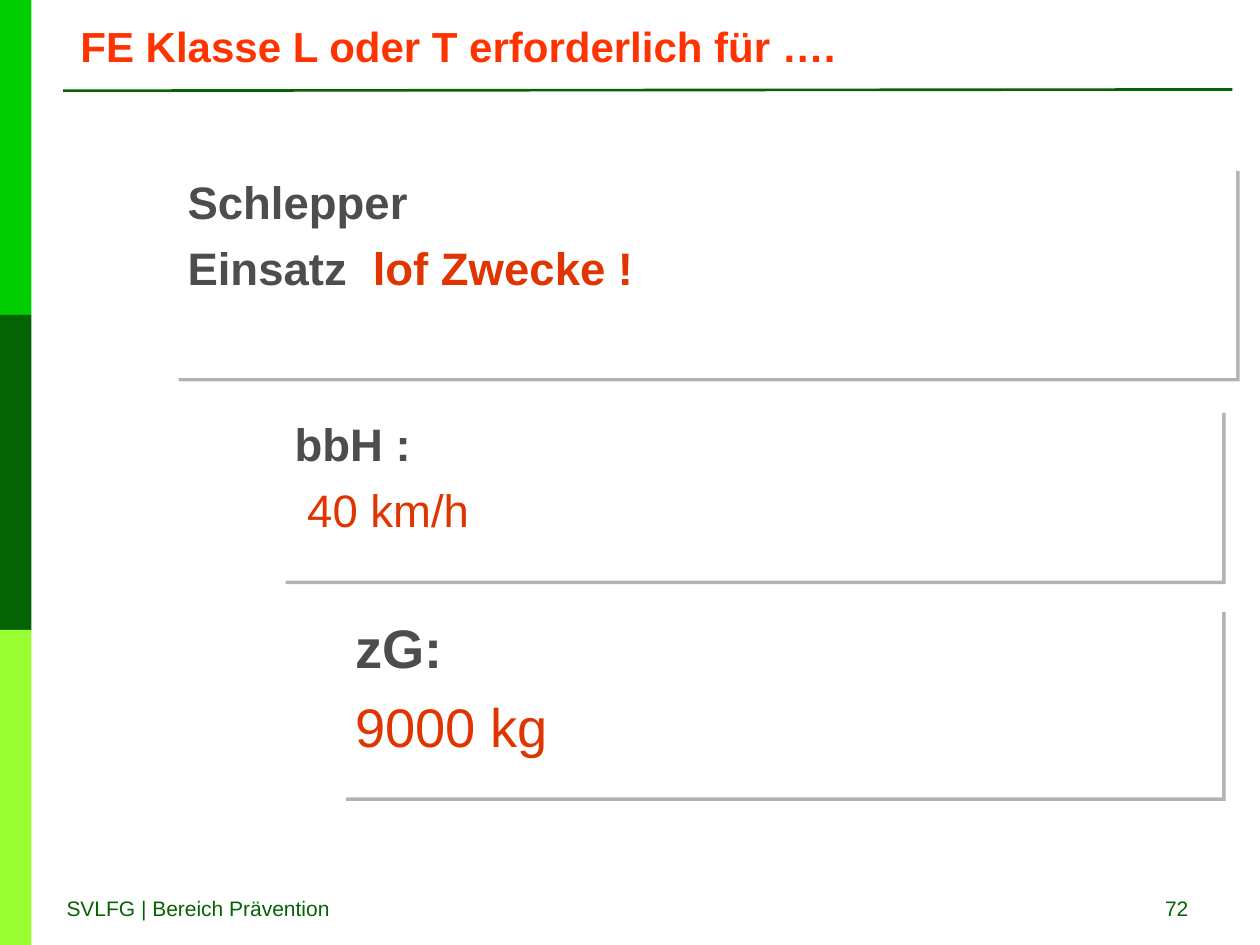
from lxml.etree import SubElement
from pptx import Presentation
from pptx.dml.color import RGBColor
from pptx.enum.shapes import MSO_CONNECTOR as Connector, MSO_SHAPE as Shape
from pptx.enum.text import MSO_ANCHOR as Anchor, PP_ALIGN as Align
from pptx.oxml.ns import qn
from pptx.util import Emu, Inches, Pt

COLUMNS, ROWS = 40, 30
GREEN, DARK_GREEN, LIME = "00CC00", "056303", "99FF33"
TITLE_RED, RED, GREY, SHADOW, WHITE = "FF3300", "E03500", "4D4D4D", "B2B2B2", "FFFFFF"


def color(value):
    return RGBColor.from_string(value)


class SlideBuilder:
    font_name = "Arial"
    space_share = 0.25  # space between paragraphs, as a share of the text size

    def __init__(self, presentation):
        self.slide = presentation.slides.add_slide(presentation.slide_layouts[6])
        self.column = presentation.slide_width / COLUMNS
        self.row = presentation.slide_height / ROWS

    def grid(self, left, top, width, height):
        return [Emu(round(count * unit)) for count, unit in zip(
            (left, top, width, height), (self.column, self.row) * 2)]

    def rectangle(self, area, fill):
        shape = self.slide.shapes.add_shape(Shape.RECTANGLE, *self.grid(*area))
        shape.shadow.inherit = False
        shape.fill.solid()
        shape.fill.fore_color.rgb = color(fill)
        shape.line.fill.background()
        return shape

    def line(self, ends, stroke, width):
        connector = self.slide.shapes.add_connector(Connector.STRAIGHT, *self.grid(*ends))
        connector.line.color.rgb = color(stroke)
        connector.line.width = Pt(width)
        SubElement(connector._element.spPr, qn("a:effectLst"))

    def fill_text(self, frame, paragraphs, size, align=Align.LEFT, anchor=Anchor.TOP):
        """Each paragraph is (indent, tab, runs); each run is (text, (color, bold))."""
        frame.word_wrap = True
        frame.vertical_anchor = anchor
        for index, (indent, tab, runs) in enumerate(paragraphs):
            paragraph = frame.add_paragraph() if index else frame.paragraphs[0]
            paragraph.alignment = align
            properties = paragraph._p.get_or_add_pPr()
            if indent:
                properties.set("marL", str(Inches(indent)))
            if index:
                paragraph.space_before = Pt(size * self.space_share)
            if tab:
                tabs = SubElement(properties, qn("a:tabLst"))
                SubElement(tabs, qn("a:tab"), pos=str(Inches(tab)), algn="l")
            for text, (fill, bold) in runs:
                run = paragraph.add_run()
                run.text = text
                values = {"name": self.font_name, "size": Pt(size), "bold": bold}
                for name, value in values.items():
                    setattr(run.font, name, value)
                run.font.color.rgb = color(fill)

    def label(self, area, text, size, style, **layout):
        box = self.slide.shapes.add_textbox(*self.grid(*area))
        self.fill_text(box.text_frame, [(0, 0, [(text, style)])], size, **layout)

    def card(self, area, paragraphs, size):
        """White panel with a hard shadow to the lower right."""
        shape = self.rectangle(area, WHITE)
        effects = shape._element.spPr.find(qn("a:effectLst"))
        shadow = SubElement(effects, qn("a:outerShdw"), dist=str(Pt(2.8)),
                            dir=str(45 * 60000), algn="ctr", rotWithShape="0")
        SubElement(shadow, qn("a:srgbClr"), val=SHADOW)
        self.fill_text(shape.text_frame, paragraphs, size)


def main():
    presentation = Presentation()
    presentation.slide_width, presentation.slide_height = Inches(10), Inches(7.5)
    builder = SlideBuilder(presentation)

    # Side bar in three equal bands, and the rule below the title
    band = ROWS / 3
    for index, fill in enumerate((GREEN, DARK_GREEN, LIME)):
        builder.rectangle((0, index * band, 1, band), fill)
    builder.line((2, 2.88, 39.12, 2.84), DARK_GREEN, 1.5)

    # Title and footer
    builder.label((2.16, 0.52, 33.6, 1.88), "FE Klasse L oder T erforderlich für ….",
                  24, (TITLE_RED, True), anchor=Anchor.MIDDLE)
    builder.label((1.72, 28.24, 11.04, 1.2), "SVLFG | Bereich Prävention",
                  12, (DARK_GREEN, False))
    builder.label((28.8, 28.24, 9.32, 1.32), "72", 12, (DARK_GREEN, False),
                  align=Align.RIGHT)

    # Cards: area, text size, paragraphs
    heading, accent, value = (GREY, True), (RED, True), (RED, False)
    cards = [
        ((5.56, 5.32, 33.68, 6.68), 26,
         [(0, 0, [("Schlepper", heading)]),
          (0, 1.47, [("Einsatz\t", heading), ("lof Zwecke !", accent)])]),
        ((8.96, 13, 29.84, 5.44), 26,
         [(0, 0, [("bbH :", heading)]), (0.1, 0, [("40 km/h", value)])]),
        ((10.88, 19.32, 27.92, 6), 31,
         [(0, 0, [("zG:", heading)]), (0, 0, [("9000 kg", value)])]),
    ]
    for area, size, paragraphs in cards:
        builder.card(area, paragraphs, size)

    presentation.save("out.pptx")


if __name__ == "__main__":
    main()
